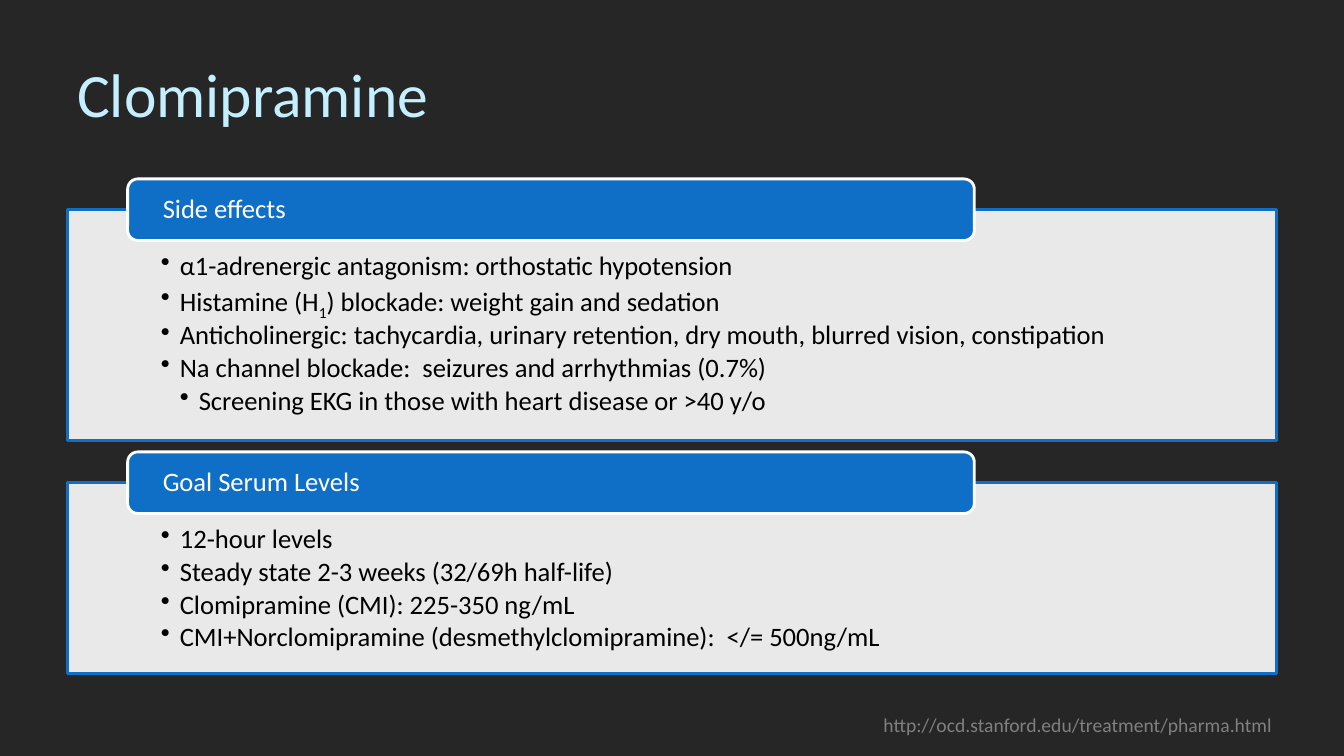
from lxml.etree import SubElement
from pptx import Presentation
from pptx.dml.color import RGBColor
from pptx.enum.shapes import MSO_SHAPE
from pptx.enum.text import MSO_ANCHOR, PP_ALIGN
from pptx.oxml.ns import qn
from pptx.util import Pt

BLUE, WHITE = "0F6FC6", "FFFFFF"
BODY_SIZE = 19
BULLET_INDENT = 13.5
HEADER_RISE = 21.6

# Each bullet is a level and its runs; every second run is a subscript.
SIDE_EFFECTS = [
    (1, ["α1-adrenergic antagonism: orthostatic hypotension"]),
    (1, ["Histamine (H", "1", ") blockade: weight gain and sedation"]),
    (1, ["Anticholinergic: tachycardia, urinary retention, dry mouth, "
         "blurred vision, constipation"]),
    (1, ["Na channel blockade:  seizures and arrhythmias (0.7%)"]),
    (2, ["Screening EKG in those with heart disease or >40 y/o"]),
]
SERUM_LEVELS = [
    (1, ["12-hour levels"]),
    (1, ["Steady state 2-3 weeks (32/69h half-life)"]),
    (1, ["Clomipramine (CMI): 225-350 ng/mL"]),
    (1, ["CMI+Norclomipramine (desmethylclomipramine):  </= 500ng/mL"]),
]


def color(hex_string):
    return RGBColor.from_string(hex_string)


def write(paragraph, text, size=BODY_SIZE, fill="000000", subscript=False):
    run = paragraph.add_run()
    run.text = text
    run.font.name = "Calibri"
    run.font.size = Pt(size)
    run.font.color.rgb = color(fill)
    if subscript:
        run._r.get_or_add_rPr().set("baseline", "-25000")


def set_frame(shape, left=7.2, top=3.6, anchor=MSO_ANCHOR.TOP, wrap=True):
    """Set symmetric side insets, top inset and anchor; return the text frame."""
    frame = shape.text_frame
    frame.word_wrap = wrap
    frame.margin_left = frame.margin_right = Pt(left)
    frame.margin_top = Pt(top)
    frame.vertical_anchor = anchor
    return frame


def add_box(slide, kind, box, fill, line):
    shape = slide.shapes.add_shape(kind, *map(Pt, box))
    shape.shadow.inherit = False
    shape.fill.solid()
    shape.fill.fore_color.rgb = color(fill)
    shape.line.color.rgb = color(line)
    shape.line.width = Pt(2)
    return shape


def set_bullet(paragraph, level):
    paragraph.level = level
    properties = paragraph._p.get_or_add_pPr()
    properties.set("marL", str(Pt(BULLET_INDENT * level)))
    properties.set("indent", str(-Pt(BULLET_INDENT)))
    SubElement(properties, qn("a:buChar")).set("char", "•")


def add_label(slide, box, text, size, fill, anchor=MSO_ANCHOR.TOP, wrap=True):
    label = slide.shapes.add_textbox(*map(Pt, box))
    frame = set_frame(label, anchor=anchor, wrap=wrap)
    write(frame.paragraphs[0], text, size=size, fill=fill)


def add_panel(slide, box, heading, bullets):
    """Draw a bulleted panel with its heading tab straddling the top edge."""
    left, top, width, height = box
    body = add_box(slide, MSO_SHAPE.RECTANGLE, box, WHITE, BLUE)
    white = body.fill._xPr.find(qn("a:solidFill"))[0]
    SubElement(white, qn("a:alpha")).set("val", "90000")
    frame = set_frame(body, left=67, top=31)
    for index, (level, runs) in enumerate(bullets):
        paragraph = frame.add_paragraph() if index else frame.paragraphs[0]
        set_bullet(paragraph, level)
        paragraph.alignment = PP_ALIGN.LEFT
        paragraph.line_spacing = 0.9
        paragraph.space_after = Pt(0.15 * BODY_SIZE)
        for position, text in enumerate(runs):
            write(paragraph, text, subscript=position % 2 == 1)

    tab_box = (left + width * 0.05, top - HEADER_RISE, width * 0.7, 44)
    tab = add_box(slide, MSO_SHAPE.ROUNDED_RECTANGLE, tab_box, BLUE, WHITE)
    frame = set_frame(tab, left=23, top=0, anchor=MSO_ANCHOR.MIDDLE)
    frame.margin_bottom = 0
    paragraph = frame.paragraphs[0]
    paragraph.alignment = PP_ALIGN.LEFT
    paragraph.line_spacing = 0.9
    write(paragraph, heading, fill=WHITE)


def main():
    presentation = Presentation()
    presentation.slide_width, presentation.slide_height = Pt(960), Pt(540)
    slide = presentation.slides.add_slide(presentation.slide_layouts[6])
    slide.background.fill.solid()
    slide.background.fill.fore_color.rgb = color("262626")

    add_label(slide, (48, 21.6, 864, 90), "Clomipramine", 44, "C4EFFF",
              anchor=MSO_ANCHOR.MIDDLE)
    add_panel(slide, (48, 149.4, 864, 165), "Side effects", SIDE_EFFECTS)
    add_panel(slide, (48, 344.4, 864, 136.6), "Goal Serum Levels", SERUM_LEVELS)
    add_label(slide, (624, 506, 330, 24.5),
              "http://ocd.stanford.edu/treatment/pharma.html", 14, "808080",
              wrap=False)
    presentation.save("out.pptx")


if __name__ == "__main__":
    main()
